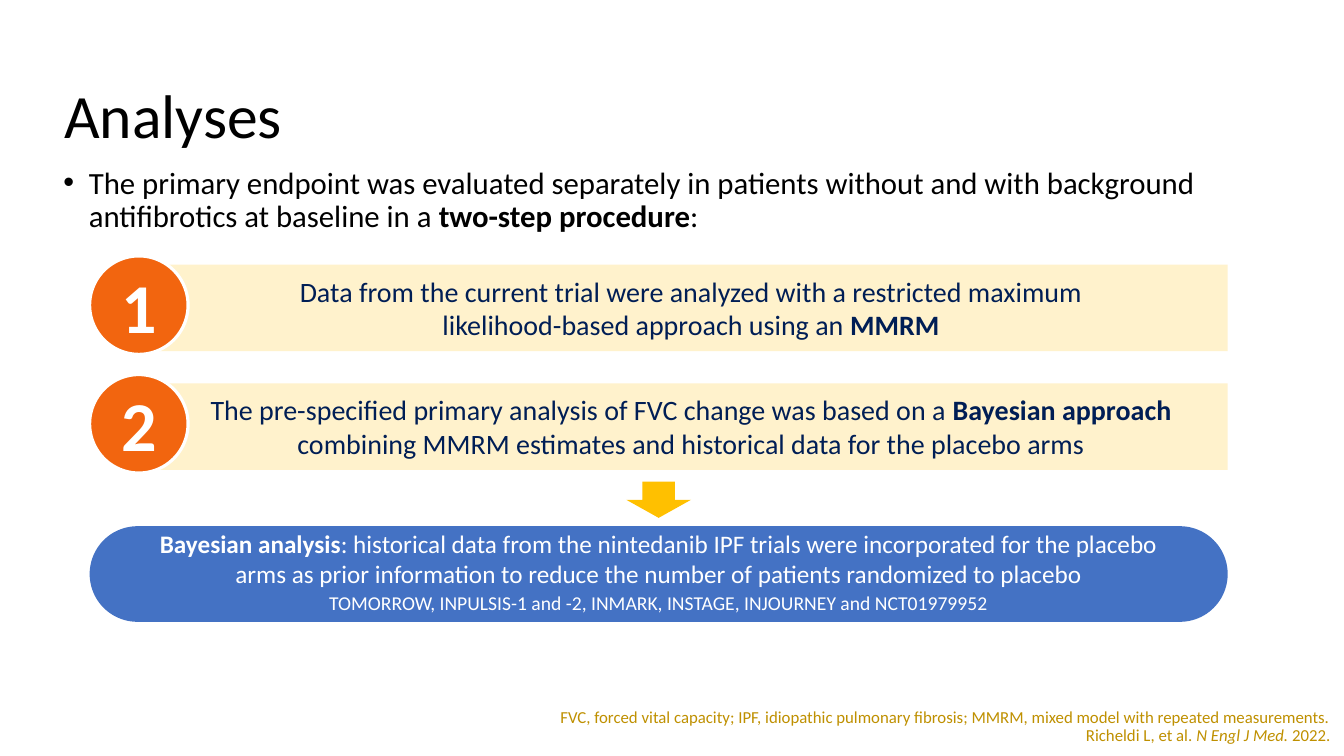
import pptx
import pptx.util
import pptx.dml.color
import pptx.enum.shapes
import pptx.enum.text
import lxml.etree

Cm, Pt = pptx.util.Cm, pptx.util.Pt
SHAPE = pptx.enum.shapes.MSO_SHAPE
ALIGN = pptx.enum.text.PP_ALIGN
ANCHOR = pptx.enum.text.MSO_ANCHOR

# Each text is a list of paragraphs; a paragraph is a list of (words, style).
TITLE = [[("Analyses", "")]]
INTRO = [[
    ("The primary endpoint was evaluated separately in patients without and with "
     "background antifibrotics at baseline in a ", ""),
    ("two-step procedure", "bold"),
    (":", ""),
]]
STEPS = [
    [[("Data from the current trial were analyzed with a restricted maximum", "")],
     [("likelihood-based approach using an ", ""), ("MMRM", "bold")]],
    [[("The pre-specified primary analysis of FVC change was based on a ", ""),
      ("Bayesian approach", "bold")],
     [("combining MMRM estimates and historical data for the placebo arms", "")]],
]
BAYESIAN = [
    [("Bayesian analysis", "bold"),
     (": historical data from the nintedanib IPF trials were incorporated for the placebo", "")],
    [("arms as prior information to reduce the number of patients randomized to placebo", "")],
]
TRIALS = [[("TOMORROW, INPULSIS-1 and -2, INMARK, INSTAGE, INJOURNEY and NCT01979952", "")]]
FOOTNOTE = [
    [("FVC, forced vital capacity; IPF, idiopathic pulmonary fibrosis; MMRM, "
      "mixed model with repeated measurements.", "")],
    [("Richeldi L, et al. ", ""), ("N Engl J Med.", "italic"), (" 2022.", "")],
]

FONT = "Calibri"
COLORS = {
    "black": "000000", "white": "FFFFFF", "navy": "001E55", "cream": "FFF2CC",
    "orange": "F2650F", "amber": "FFC000", "blue": "4472C4", "gold": "BF9000",
}
INSETS = (0.25, 0.13, 0.25, 0.13)  # left, top, right, bottom in cm
LEFT, RIGHT = 2.26, 30.94          # edges shared by the steps and the conclusion
STEP_TOP, STEP_PITCH = 6.45, 2.99
BADGE, BAR_HEIGHT = 2.48, 2.18
BAR_LEFT, BAR_DROP = 3.89, 0.22


def rgb(name):
    return pptx.dml.color.RGBColor.from_string(COLORS[name])


def write(shape, paragraphs, size, color, align=ALIGN.LEFT, anchor=ANCHOR.MIDDLE,
          spacing=1.0, insets=INSETS, wrap=True, bullet=False):
    frame = shape.text_frame
    frame.word_wrap = wrap
    frame.vertical_anchor = anchor
    (frame.margin_left, frame.margin_top,
     frame.margin_right, frame.margin_bottom) = map(Cm, insets)
    for index, runs in enumerate(paragraphs):
        paragraph = frame.add_paragraph() if index else frame.paragraphs[0]
        paragraph.alignment = align
        paragraph.line_spacing = spacing
        if bullet:
            add_bullet(paragraph)
        for words, style in runs:
            run = paragraph.add_run()
            run.text = words
            run.font.name = FONT
            run.font.size = Pt(size)
            run.font.color.rgb = rgb(color)
            run.font.bold = style == "bold"
            run.font.italic = style == "italic"


def add_bullet(paragraph):
    properties = paragraph._p.get_or_add_pPr()
    properties.set("marL", str(Cm(0.64)))
    properties.set("indent", str(-Cm(0.64)))
    namespace = properties.nsmap["a"]
    lxml.etree.SubElement(properties, f"{{{namespace}}}buFont", typeface="Arial")
    lxml.etree.SubElement(properties, f"{{{namespace}}}buChar", char="•")


def add_block(slide, kind, box, fill, outline=None):
    block = slide.shapes.add_shape(kind, *map(Cm, box))
    block.shadow.inherit = False
    block.fill.solid()
    block.fill.fore_color.rgb = rgb(fill)
    if outline:
        block.line.color.rgb = rgb(outline)
        block.line.width = Pt(2.25)
    else:
        block.line.fill.background()
    return block


def add_text(slide, box, paragraphs, size, color, **layout):
    write(slide.shapes.add_textbox(*map(Cm, box)), paragraphs, size, color, **layout)


def add_step(slide, number, paragraphs):
    top = STEP_TOP + (number - 1) * STEP_PITCH
    bar = add_block(slide, SHAPE.RECTANGLE,
                    (BAR_LEFT, top + BAR_DROP, RIGHT - BAR_LEFT, BAR_HEIGHT), "cream")
    write(bar, paragraphs, 20, "navy", align=ALIGN.CENTER)
    badge = add_block(slide, SHAPE.OVAL, (LEFT, top, BADGE, BADGE), "orange", "white")
    write(badge, [[(str(number), "bold")]], 50, "white", align=ALIGN.CENTER)


def add_conclusion(slide):
    center = (LEFT + RIGHT) / 2
    arrow_width, trials_width = 1.63, 17.2
    add_block(slide, SHAPE.DOWN_ARROW,
              (center - arrow_width / 2, 12.14, arrow_width, 0.91), "amber")
    pill = add_block(slide, SHAPE.ROUNDED_RECTANGLE, (LEFT, 13.26, RIGHT - LEFT, 2.41), "blue")
    pill.adjustments[0] = 0.5
    # The deep bottom inset leaves room for the trial names.
    write(pill, BAYESIAN, 18, "white", align=ALIGN.CENTER, insets=(0.25, 0.13, 0.25, 0.9))
    add_text(slide, (center - trials_width / 2, 14.88, trials_width, 0.61), TRIALS, 14, "white",
             align=ALIGN.CENTER, anchor=ANCHOR.TOP, insets=(0, 0, 0, 0), wrap=False)


def main():
    deck = pptx.Presentation()
    deck.slide_width, deck.slide_height = Cm(33.87), Cm(19.05)
    slide = deck.slides.add_slide(deck.slide_layouts[6])
    add_text(slide, (1.37, 1.14, 31.19, 3.68), TITLE, 44, "black", spacing=0.9)
    add_text(slide, (1.35, 4.09, 31.19, 2.13), INTRO, 22, "black",
             anchor=ANCHOR.TOP, spacing=0.9, bullet=True)
    add_conclusion(slide)
    for number, paragraphs in enumerate(STEPS, start=1):
        add_step(slide, number, paragraphs)
    add_text(slide, (9.53, 17.58, 24, 1.19), FOOTNOTE, 12, "gold", align=ALIGN.RIGHT,
             anchor=ANCHOR.BOTTOM, spacing=0.9, insets=(0, 0, 0, 0))
    deck.save("out.pptx")


if __name__ == "__main__":
    main()
